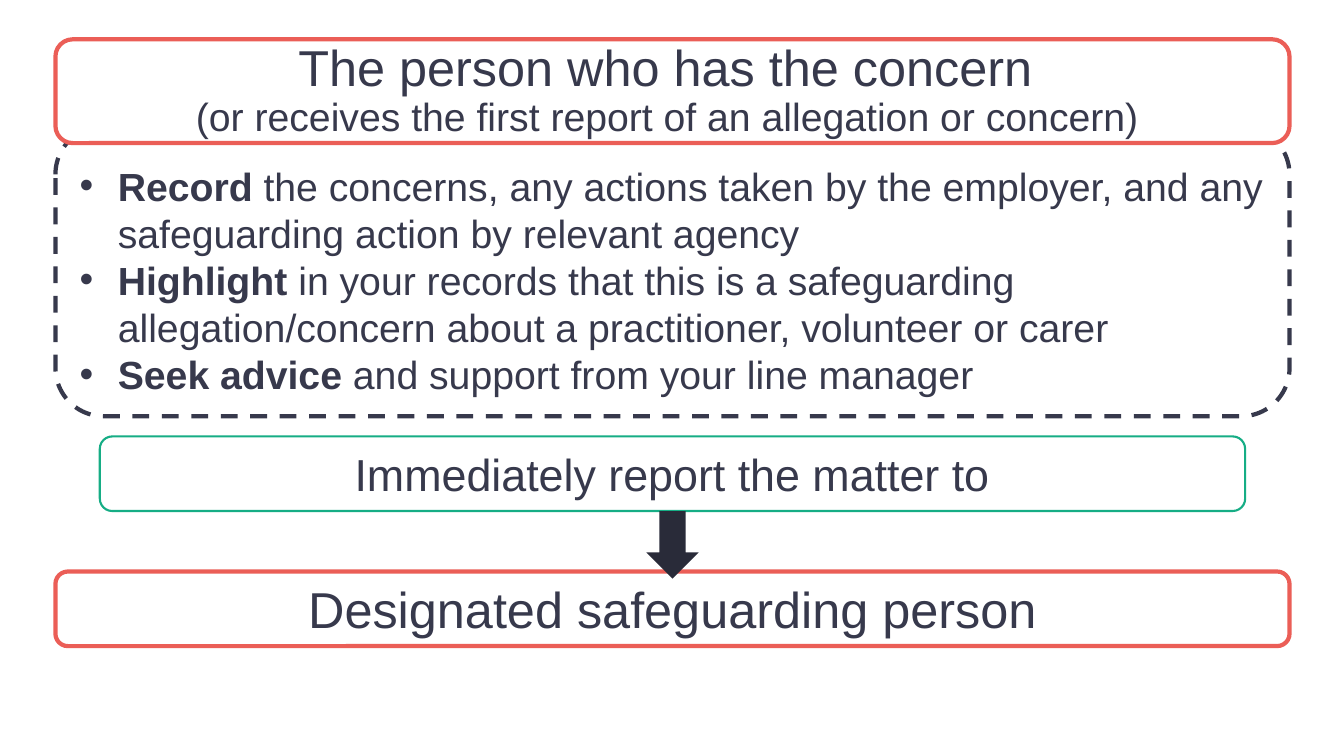
from dataclasses import dataclass

from lxml.etree import SubElement
from pptx import Presentation
from pptx.dml.color import RGBColor
from pptx.enum.dml import MSO_LINE
from pptx.enum.shapes import MSO_SHAPE
from pptx.enum.text import MSO_ANCHOR, PP_ALIGN
from pptx.oxml.ns import qn
from pptx.util import Inches, Pt


@dataclass(frozen=True)
class Theme:
    font: str = "Arial"
    ink: str = "37394C"
    arrow: str = "292B39"
    white: str = "FFFFFF"
    red: str = "EB5E57"
    green: str = "16AD85"
    heading: int = 36
    step: int = 32
    body: int = 28
    heavy: float = 3
    thin: float = 1.5


THEME = Theme()

GUIDANCE = [
    ("Record", " the concerns, any actions taken by the employer, "
               "and any safeguarding action by relevant agency"),
    ("Highlight", " in your records that this is a safeguarding "
                  "allegation/concern about a practitioner, volunteer or carer"),
    ("Seek advice ", "and support from your line manager"),
]


def add_span(para, text, size=THEME.body, bold=False):
    span = para.add_run()
    span.text = text
    span.font.name = THEME.font
    span.font.size = Pt(size)
    span.font.bold = bold
    span.font.color.rgb = RGBColor.from_string(THEME.ink)


def add_bullet(para, indent):
    properties = para._p.get_or_add_pPr()
    properties.set("marL", str(indent))
    properties.set("indent", str(-indent))
    SubElement(properties, qn("a:buFont"), typeface=THEME.font)
    SubElement(properties, qn("a:buChar"), char="•")


def add_panel(page, box, shape_type=MSO_SHAPE.ROUNDED_RECTANGLE, fill=None,
              line=None, width=THEME.heavy, anchor=MSO_ANCHOR.MIDDLE):
    panel = page.shapes.add_shape(shape_type, *map(Inches, box))
    panel.shadow.inherit = False
    if fill:
        panel.fill.solid()
        panel.fill.fore_color.rgb = RGBColor.from_string(fill)
    else:
        panel.fill.background()
    if line:
        panel.line.color.rgb = RGBColor.from_string(line)
        panel.line.width = Pt(width)
    else:
        panel.line.fill.background()
    panel.text_frame.word_wrap = True
    panel.text_frame.vertical_anchor = anchor
    return panel


def add_step(page, box, text, size, line, width=THEME.heavy):
    """White outlined box with one centred line; returns its paragraph."""
    panel = add_panel(page, box, fill=THEME.white, line=line, width=width)
    para = panel.text_frame.paragraphs[0]
    para.alignment = PP_ALIGN.CENTER
    add_span(para, text, size=size)
    return para


def add_guidance(page, box):
    panel = add_panel(page, box, line=THEME.ink, anchor=MSO_ANCHOR.BOTTOM)
    panel.line.dash_style = MSO_LINE.DASH
    frame = panel.text_frame
    for index, (action, detail) in enumerate(GUIDANCE):
        para = frame.add_paragraph() if index else frame.paragraphs[0]
        para.alignment = PP_ALIGN.LEFT
        add_bullet(para, Inches(0.38))
        add_span(para, action, bold=True)
        add_span(para, detail)


def add_concern(page, box):
    para = add_step(page, box, "The person who has the concern ",
                    THEME.heading, THEME.red)
    para.line_spacing = 0.9
    para.add_line_break()
    add_span(para, "(or receives the first report of an allegation or concern) ")


def build_reporting_page(page, box):
    left, top, width, height = box
    step_height, inset = 0.74, 0.44
    report_top = top + 3.94
    arrow_width = 0.52

    # Final recipient, then the guidance tucked under the concern box
    add_step(page, (left, top + height - step_height, width, step_height),
             "Designated safeguarding person", THEME.heading, THEME.red)
    add_guidance(page, (left, top + 0.86, width, 2.88))
    add_concern(page, (left, top, width, 1.03))

    # Report step and the arrow down to the recipient
    add_step(page, (left + inset, report_top, width - 2 * inset, step_height),
             "Immediately report the matter to", THEME.step, THEME.green, THEME.thin)
    add_panel(page, (left + (width - arrow_width) / 2, report_top + step_height,
                     arrow_width, 0.67),
              shape_type=MSO_SHAPE.DOWN_ARROW, fill=THEME.arrow)


def main():
    deck = Presentation()
    deck.slide_width, deck.slide_height = Inches(13.33), Inches(7.5)
    page = deck.slides.add_slide(deck.slide_layouts.get_by_name("Blank"))
    build_reporting_page(page, (0.55, 0.39, 12.24, 6.02))
    deck.save("out.pptx")


if __name__ == "__main__":
    main()
